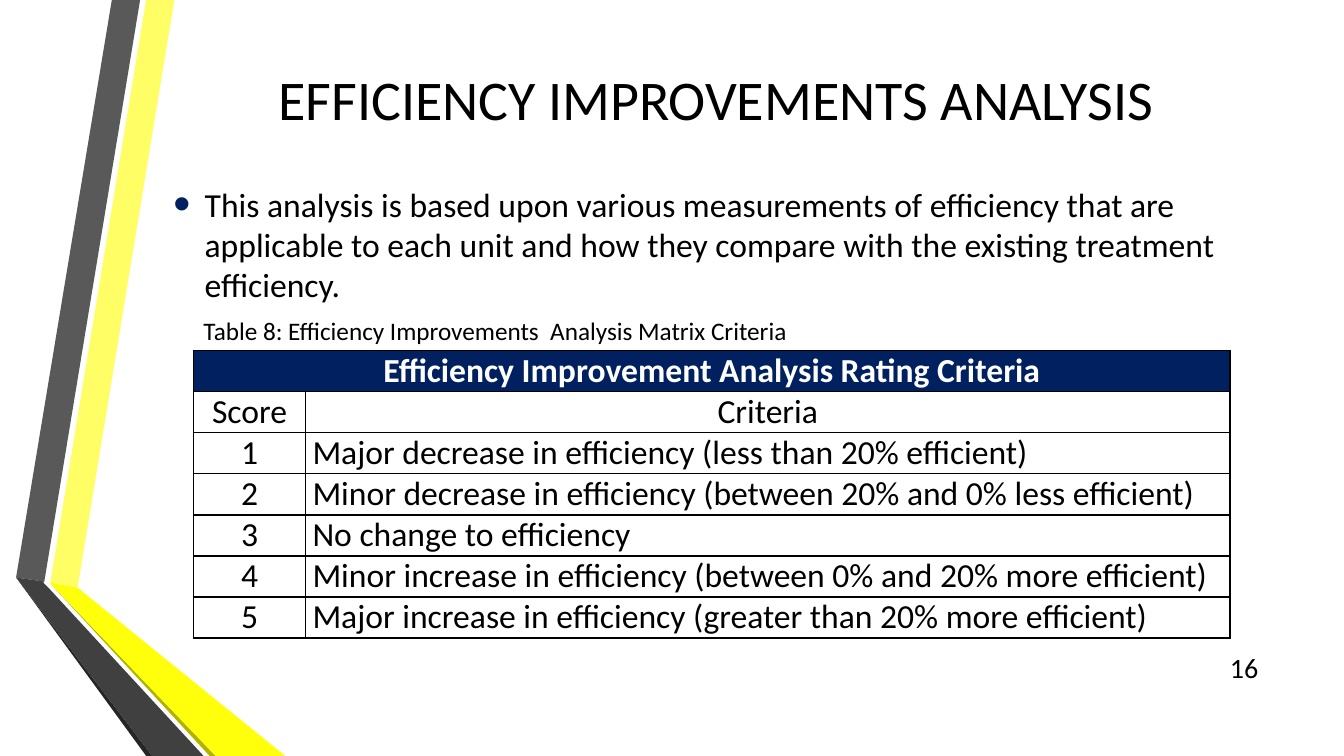
from lxml.etree import SubElement
from pptx import Presentation
from pptx.dml.color import RGBColor
from pptx.enum.text import MSO_ANCHOR, MSO_AUTO_SIZE, PP_ALIGN
from pptx.oxml.ns import qn
from pptx.util import Inches, Pt

TITLE = "EFFICIENCY IMPROVEMENTS ANALYSIS"
BODY = ("This analysis is based upon various measurements of efficiency that are "
        "applicable to each unit and how they compare with the existing treatment efficiency.")
CAPTION = "Table 8: Efficiency Improvements  Analysis Matrix Criteria"
PAGE = "16"
HEADING = "Efficiency Improvement Analysis Rating Criteria"
ROWS = [
    (HEADING, ""),
    ("Score", "Criteria"),
    ("1", "Major decrease in efficiency (less than 20% efficient)"),
    ("2", "Minor decrease in efficiency (between 20% and 0% less efficient)"),
    ("3", "No change to efficiency"),
    ("4", "Minor increase in efficiency (between 0% and 20% more efficient)"),
    ("5", "Major increase in efficiency (greater than 20% more efficient)"),
]
COL_WIDTHS = (1.11, 9.17)
ROW_HEIGHT = 0.4
NAVY, BLACK, WHITE = "002060", "000000", "FFFFFF"
RIBBONS = [
    ("FFFF65", [(0.5, 5.78), (0.77, 5.83), (1.73, 0), (1.45, 0)]),
    ("595959", [(1.39, 0), (1.11, 0), (0.16, 5.73), (0.44, 5.77)]),
    ("262626", [(0.16, 5.73), (1.45, 7.5), (1.51, 7.5)]),
    ("B2B200", [(0.5, 5.79), (2.08, 7.5), (2.14, 7.5)]),
    ("FFFF0C", [(0.5, 5.79), (2.14, 7.5), (2.83, 7.5), (0.77, 5.83), (0.5, 5.78)]),
    ("404040", [(2.02, 7.5), (0.48, 5.83), (0.43, 5.78), (0.44, 5.77),
                (0.16, 5.73), (1.51, 7.5)]),
]


def rgb(color):
    return RGBColor.from_string(color)


def write(tf, text, size, color=BLACK, align=PP_ALIGN.LEFT, bold=False):
    tf.text = text
    p = tf.paragraphs[0]
    p.alignment = align
    for r in p.runs:
        r.font.name = "Calibri"
        r.font.size = Pt(size)
        r.font.bold = bold
        r.font.color.rgb = rgb(color)
    return p


def place(sp, left, top, width, height, anchor):
    sp.left, sp.top = Inches(left), Inches(top)
    sp.width, sp.height = Inches(width), Inches(height)
    tf = sp.text_frame
    tf.word_wrap = True
    tf.auto_size = MSO_AUTO_SIZE.NONE
    tf.vertical_anchor = anchor
    return tf


def add_bullet(p, color):
    pPr = p._p.get_or_add_pPr()
    pPr.set("marL", str(Inches(0.31)))
    pPr.set("indent", str(-Inches(0.31)))
    SubElement(SubElement(pPr, qn("a:buClr")), qn("a:srgbClr"), val=color)
    SubElement(pPr, qn("a:buSzPct"), val="145000")
    SubElement(pPr, qn("a:buFont"), typeface="Arial")
    SubElement(pPr, qn("a:buChar"), char="•")


def add_borders(cell, color):
    tcPr = cell._tc.get_or_add_tcPr()
    for side in ("lnL", "lnR", "lnT", "lnB"):
        ln = SubElement(tcPr, qn(f"a:{side}"), w=str(Pt(1)))
        SubElement(SubElement(ln, qn("a:solidFill")), qn("a:srgbClr"), val=color)


def add_ribbon(shapes, color, points):
    corners = [(Inches(x), Inches(y)) for x, y in points]
    builder = shapes.build_freeform(*corners[0])
    builder.add_line_segments(corners[1:], close=True)
    sp = builder.convert_to_shape()
    sp.shadow.inherit = False
    sp.fill.solid()
    sp.fill.fore_color.rgb = rgb(color)
    sp.line.fill.background()


def add_criteria_table(shapes):
    frame = shapes.add_table(len(ROWS), len(COL_WIDTHS), Inches(1.92), Inches(3.48),
                             Inches(sum(COL_WIDTHS)), Inches(ROW_HEIGHT * len(ROWS)))
    table = frame.table
    table.first_row = table.horz_banding = False
    for column, width in zip(table.columns, COL_WIDTHS):
        column.width = Inches(width)
    for i, row in enumerate(ROWS):
        table.rows[i].height = Inches(ROW_HEIGHT)
        for j, text in enumerate(row):
            cell = table.cell(i, j)
            cell.margin_left = cell.margin_right = Inches(0.07)
            cell.margin_top = cell.margin_bottom = 0
            add_borders(cell, BLACK)
            if i == 0:
                cell.fill.solid()
                cell.fill.fore_color.rgb = rgb(NAVY)
            else:
                cell.fill.background()
            align = PP_ALIGN.LEFT if i > 1 and j == 1 else PP_ALIGN.CENTER
            write(cell.text_frame, text, 24, WHITE if i == 0 else BLACK, align, i == 0)
    table.cell(0, 0).merge(table.cell(0, 1))


def main():
    prs = Presentation()
    prs.slide_width, prs.slide_height = Inches(13.33), Inches(7.5)
    slide = prs.slides.add_slide(prs.slide_layouts[1])
    shapes = slide.shapes

    for color, points in RIBBONS:
        add_ribbon(shapes, color, points)

    tf = place(shapes.title, 1.62, 0.01, 10.96, 1.92, MSO_ANCHOR.MIDDLE)
    write(tf, TITLE, 40, align=PP_ALIGN.CENTER)

    tf = place(slide.placeholders[1], 1.62, 0.94, 10.96, 3.42, MSO_ANCHOR.TOP)
    tf.margin_top = Inches(0.88)
    p = write(tf, BODY, 24)
    p.space_before, p.space_after = Pt(0), Pt(6)
    add_bullet(p, NAVY)

    tf = place(shapes.add_textbox(0, 0, 0, 0), 11.98, 6.42, 0.6, 0.4, MSO_ANCHOR.MIDDLE)
    write(tf, PAGE, 20, align=PP_ALIGN.RIGHT)

    add_criteria_table(shapes)

    tf = place(shapes.add_textbox(0, 0, 0, 0), 1.92, 3.08, 8.36, 0.4, MSO_ANCHOR.TOP)
    write(tf, CAPTION, 18)

    prs.save("out.pptx")


if __name__ == "__main__":
    main()
